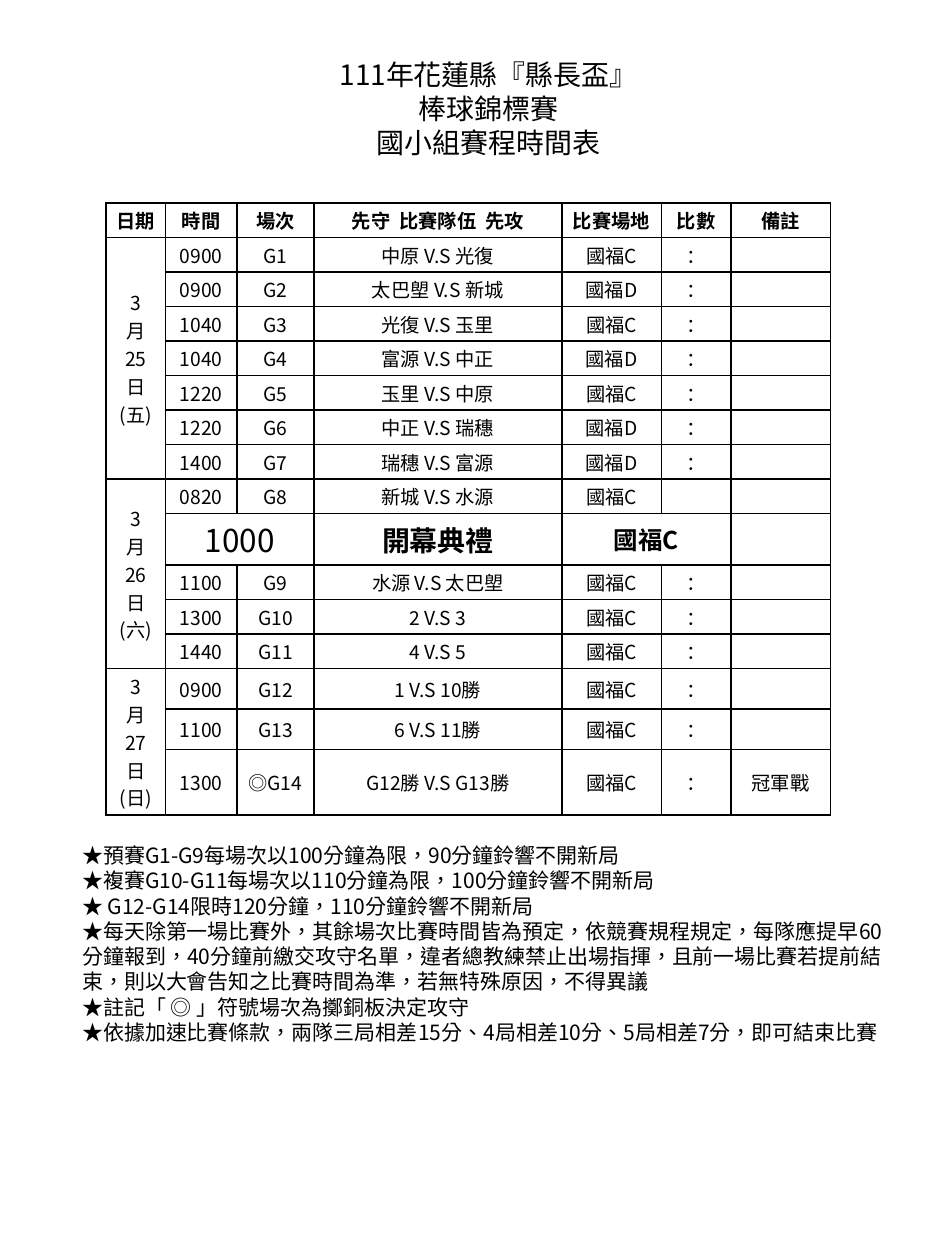
"""Build the one-page schedule of a school baseball tournament."""
from dataclasses import dataclass

from lxml import etree
from pptx import Presentation
from pptx.dml.color import RGBColor
from pptx.enum.text import MSO_ANCHOR, MSO_AUTO_SIZE, PP_ALIGN
from pptx.oxml.ns import qn
from pptx.util import Emu, Pt

CENTER, LEFT = PP_ALIGN.CENTER, PP_ALIGN.LEFT
MIDDLE, TOP = MSO_ANCHOR.MIDDLE, MSO_ANCHOR.TOP
GROW = MSO_AUTO_SIZE.SHAPE_TO_FIT_TEXT
PX = 914400 // 252
FONT = "Noto Sans CJK SC"
BLACK = "000000"
CEREMONY_ROW = 9
COLUMNS = [119, 143, 154, 496, 199, 139, 199]
HEIGHTS = [69] * CEREMONY_ROW + [103] + [69] * 3 + [81, 81, 131]
HEADERS = ["日期", "時間", "場次", "先守  比賽隊伍  先攻", "比賽場地", "比數", "備註"]
TITLE = "111年花蓮縣『縣長盃』\n棒球錦標賽\n國小組賽程時間表"
NOTES = "\n".join([
    "★預賽G1-G9每場次以100分鐘為限，90分鐘鈴響不開新局",
    "★複賽G10-G11每場次以110分鐘為限，100分鐘鈴響不開新局",
    "★ G12-G14限時120分鐘，110分鐘鈴響不開新局",
    "★每天除第一場比賽外，其餘場次比賽時間皆為預定，依競賽規程規定，每隊應提早60分鐘報到，"
    "40分鐘前繳交攻守名單，違者總教練禁止出場指揮，且前一場比賽若提前結束，"
    "則以大會告知之比賽時間為準，若無特殊原因，不得異議",
    "★註記「 ◎ 」符號場次為擲銅板決定攻守",
    "★依據加速比賽條款，兩隊三局相差15分、4局相差10分、5局相差7分，即可結束比賽",
])


@dataclass
class Game:
    """One row of the schedule."""
    time: str
    number: str
    teams: str
    field: str = "國福C"
    score: str = "："
    remark: str = ""

    def texts(self) -> list[str]:
        """Return the cell texts that follow the date."""
        return [self.time, self.number, self.teams, self.field, self.score, self.remark]


@dataclass
class Day:
    """One date and its games."""
    date: str
    games: list[Game]


DAYS = [
    Day("3\n月\n25\n日\n(五)", [
        Game("0900", "G1", "中原 V.S 光復"),
        Game("0900", "G2", "太巴塱 V.S 新城", "國福D"),
        Game("1040", "G3", "光復 V.S 玉里"),
        Game("1040", "G4", "富源 V.S 中正", "國福D"),
        Game("1220", "G5", "玉里 V.S 中原"),
        Game("1220", "G6", "中正 V.S 瑞穗", "國福D"),
        Game("1400", "G7", "瑞穗 V.S 富源", "國福D"),
    ]),
    Day("3\n月\n26\n日\n(六)", [
        Game("0820", "G8", "新城 V.S 水源", score=""),
        Game("1000", "", "開幕典禮", score=""),
        Game("1100", "G9", "水源 V.S 太巴塱"),
        Game("1300", "G10", "2 V.S 3"),
        Game("1440", "G11", "4 V.S 5"),
    ]),
    Day("3\n月\n27\n日\n(日)", [
        Game("0900", "G12", "1 V.S 10勝"),
        Game("1100", "G13", "6 V.S 11勝"),
        Game("1300", "◎G14", "G12勝 V.S G13勝", remark="冠軍戰"),
    ]),
]


def px(length: int) -> Emu:
    """Turn px into EMU."""
    return Emu(length * PX)


def color(code: str) -> RGBColor:
    """Turn a hex string into a colour."""
    return RGBColor.from_string(code)


def write_text(frame, text: str, *, size: float = 11, bold: bool = False,
               align=CENTER, spacing=None, language: str = "") -> None:
    """Write one paragraph for each line of text."""
    for index, line in enumerate(text.split("\n")):
        para = frame.paragraphs[0] if index == 0 else frame.add_paragraph()
        para.alignment, para.line_spacing = align, spacing
        para.space_before = para.space_after = Pt(0)
        if not line:
            etree.SubElement(para._p, qn("a:endParaRPr"), sz=str(int(size * 100)))
            continue
        span = para.add_run()
        span.text = line
        span.font.name, span.font.size, span.font.bold = FONT, Pt(size), bold
        span.font.color.rgb = color(BLACK)
        properties = span._r.get_or_add_rPr()
        etree.SubElement(properties, qn("a:ea"), typeface=FONT)
        if language:
            properties.set("lang", language)


def fill_placeholder(box, place: tuple[int, int, int, int], text: str, *,
                     size: float, align, anchor) -> None:
    """Move a placeholder and write plain lines without bullets."""
    box.left, box.top, box.width, box.height = map(px, place)
    frame = box.text_frame
    frame.word_wrap, frame.auto_size, frame.vertical_anchor = True, GROW, anchor
    write_text(frame, text, size=size, align=align, spacing=Pt(size * 1.2), language="zh-TW")
    for para in frame.paragraphs:
        properties = para._p.get_or_add_pPr()
        properties.set("marL", "0")
        properties.set("indent", "0")
        etree.SubElement(properties, qn("a:buNone"))


def format_cell(cell) -> None:
    """Give a cell black borders, no fill and small margins."""
    properties = cell._tc.get_or_add_tcPr()
    for side in ("lnL", "lnR", "lnT", "lnB"):
        line = etree.SubElement(properties, qn(f"a:{side}"), w=str(Pt(1)))
        paint = etree.SubElement(line, qn("a:solidFill"))
        etree.SubElement(paint, qn("a:srgbClr"), val=BLACK)
    cell.fill.background()
    cell.vertical_anchor = MIDDLE
    cell.margin_left = cell.margin_right = px(12)
    cell.margin_top = cell.margin_bottom = px(6)


def draw_schedule(page) -> None:
    """Draw the table of all days and games."""
    rows = [HEADERS]
    date_spans = []
    for day in DAYS:
        date_spans.append((len(rows), len(rows) + len(day.games) - 1))
        for index, game in enumerate(day.games):
            rows.append([day.date if index == 0 else "", *game.texts()])
    table = page.shapes.add_table(len(rows), len(COLUMNS), px(212), px(406),
                                  px(sum(COLUMNS)), px(sum(HEIGHTS))).table
    table.first_row = table.horz_banding = False
    for column, width in zip(table.columns, COLUMNS):
        column.width = px(width)
    for row, height in zip(table.rows, HEIGHTS):
        row.height = px(height)
    ceremony_formats = {1: {"size": 18}, 3: {"size": 16, "bold": True},
                        4: {"size": 14, "bold": True}}
    for r, texts in enumerate(rows):
        for c, text in enumerate(texts):
            cell = table.cell(r, c)
            format_cell(cell)
            style = ceremony_formats.get(c, {}) if r == CEREMONY_ROW else {"bold": r == 0}
            write_text(cell.text_frame, text, **style)
    for first, last in date_spans:
        table.cell(first, 0).merge(table.cell(last, 0))
    for first in (1, 4):
        table.cell(CEREMONY_ROW, first).merge(table.cell(CEREMONY_ROW, first + 1))


def main() -> None:
    """Build and save the deck."""
    deck = Presentation()
    deck.slide_width, deck.slide_height = px(1890), px(2520)
    page = deck.slides.add_slide(deck.slide_layouts[1])
    title, notes = page.placeholders
    fill_placeholder(title, (144, 98, 1666, 237), TITLE, size=16, align=CENTER, anchor=MIDDLE)
    fill_placeholder(notes, (139, 1673, 1666, 433), NOTES, size=12, align=LEFT, anchor=TOP)
    draw_schedule(page)
    deck.save("out.pptx")


if __name__ == "__main__":
    main()
